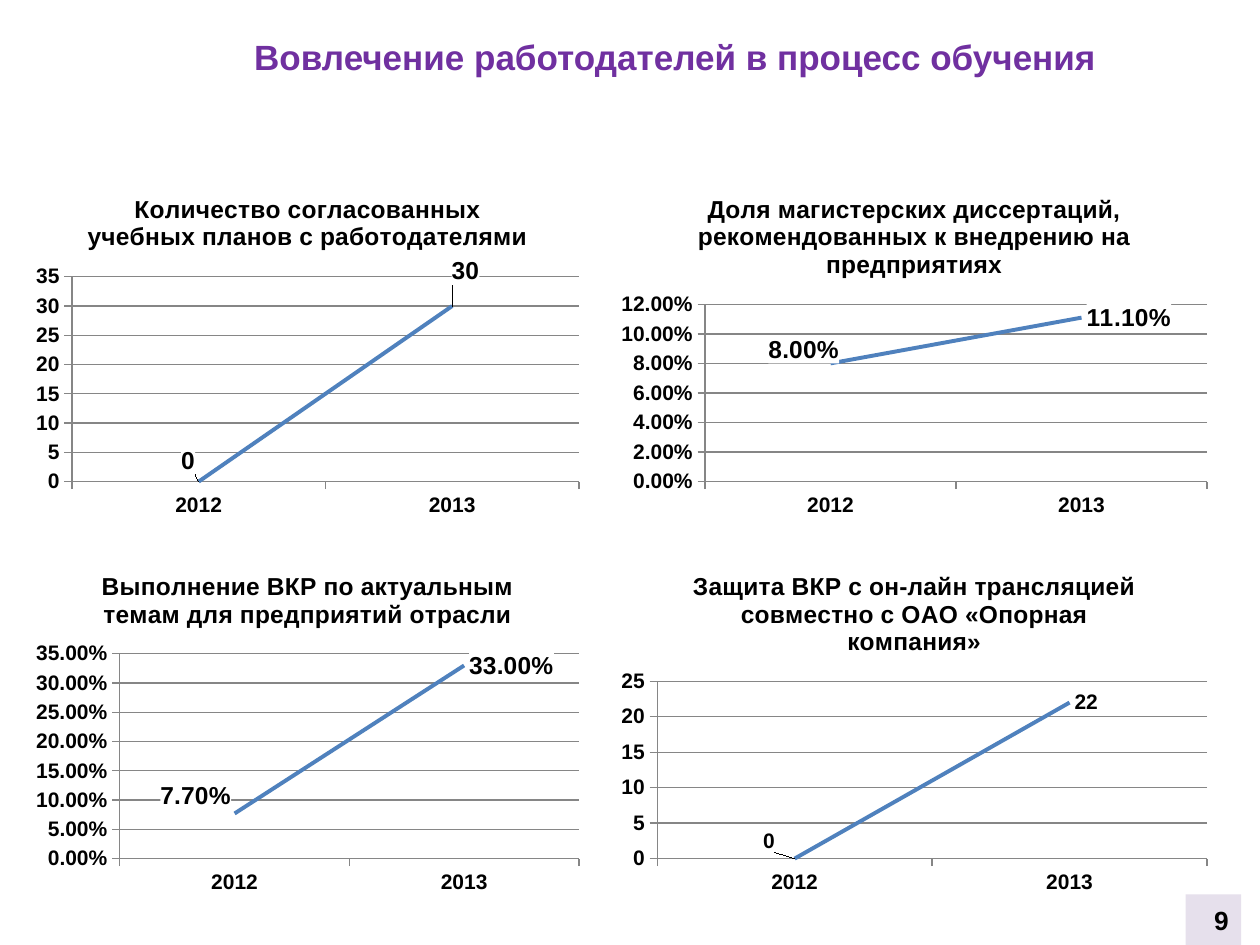
import lxml.etree
import pptx
import pptx.chart.data
import pptx.dml.color
import pptx.enum.chart
import pptx.enum.shapes
import pptx.enum.text
import pptx.oxml
import pptx.oxml.ns
import pptx.util
from pptx.util import Cm, Pt

FONT = "Arial"
BLACK, WHITE, PURPLE, LILAC = "000000", "FFFFFF", "7030A0", "E6E0EC"
SERIES_BLUE, GRID_GREY = "4F81BD", "868686"
YEARS = ["2012", "2013"]
COUNT, PERCENT = "General", "0.00%"

# title, values, number format, axis maximum, axis step, label size, label shifts
# A shift is a fraction of the chart's width and height from the place right of the point.
INDICATORS = [
    ("Количество согласованных учебных планов с работодателями",
     (0, 30), COUNT, 35, 5, 14, [(-0.04, -0.06), (-0.01, -0.1)]),
    ("Доля магистерских диссертаций, рекомендованных к внедрению на предприятиях",
     (0.08, 0.111), PERCENT, 0.12, 0.02, 14, [(-0.11, -0.04), None]),
    ("Выполнение ВКР по актуальным темам для предприятий отрасли",
     (0.077, 0.33), PERCENT, 0.35, 0.05, 14, [(-0.14, -0.05), None]),
    ("Защита ВКР с он-лайн трансляцией совместно с ОАО «Опорная компания»",
     (0, 22), COUNT, 25, 5, 12, [(-0.06, -0.05), None]),
]


def rgb(hex_colour):
    return pptx.dml.color.RGBColor.from_string(hex_colour)


def style_font(font, size, colour=BLACK):
    font.name = FONT
    font.size = Pt(size)
    font.bold = True
    font.color.rgb = rgb(colour)


def chart_xml(body):
    namespaces = pptx.oxml.ns.nsdecls("c", "a")
    tag, rest = body.split(">", 1)
    return pptx.oxml.parse_xml(f"{tag} {namespaces}>{rest}")


def white_fill():
    return chart_xml(f'<c:spPr><a:solidFill><a:srgbClr val="{WHITE}"/></a:solidFill>'
                     "<a:ln><a:noFill/></a:ln></c:spPr>")


def add_filled_box(slide, box, text, fill, size, colour, align):
    panel = slide.shapes.add_shape(pptx.enum.shapes.MSO_SHAPE.RECTANGLE, *box)
    panel.shadow.inherit = False
    panel.fill.solid()
    panel.fill.fore_color.rgb = rgb(fill)
    panel.line.fill.background()
    frame = panel.text_frame
    frame.word_wrap = True
    frame.vertical_anchor = pptx.enum.text.MSO_ANCHOR.MIDDLE
    paragraph = frame.paragraphs[0]
    paragraph.text = text
    paragraph.alignment = align
    style_font(paragraph.font, size, colour)


def style_axes(chart, number_format, maximum, step):
    values = chart.value_axis
    values.minimum_scale, values.maximum_scale = 0, maximum
    values.major_unit = step
    values.tick_labels.number_format = number_format
    values.tick_labels.number_format_is_linked = False
    values.has_major_gridlines = True
    values.major_gridlines.format.line.color.rgb = rgb(GRID_GREY)
    for axis in (values, chart.category_axis):
        axis.major_tick_mark = pptx.enum.chart.XL_TICK_MARK.OUTSIDE
        axis.format.line.color.rgb = rgb(GRID_GREY)
        style_font(axis.tick_labels.font, 12)


def label_points(chart, series, size, shifts):
    """Put a white-backed value label at each point, moved by its shift."""
    for index in range(len(shifts)):
        label = series.points[index].data_label
        style_font(label.font, size)
        label.position = pptx.enum.chart.XL_LABEL_POSITION.RIGHT
    for label, shift in zip(chart.element.xpath(".//c:dLbl"), shifts):
        label.xpath("c:txPr")[0].addprevious(white_fill())
        if shift:
            x, y = shift
            label.xpath("c:idx")[0].addnext(chart_xml(
                f'<c:layout><c:manualLayout><c:x val="{x}"/><c:y val="{y}"/>'
                "</c:manualLayout></c:layout>"))


def add_indicator_chart(slide, box, title, values, number_format, maximum, step,
                        label_size, shifts):
    data = pptx.chart.data.CategoryChartData(number_format=number_format)
    data.categories = YEARS
    data.add_series(title, values)
    chart = slide.shapes.add_chart(pptx.enum.chart.XL_CHART_TYPE.LINE, *box, data).chart
    style_font(chart.font, 12)
    chart.element.xpath("c:txPr")[0].addprevious(white_fill())
    chart.has_legend = False
    chart.has_title = True
    heading = chart.chart_title.text_frame.paragraphs[0]
    heading.text = title
    style_font(heading.font, 14)
    style_axes(chart, number_format, maximum, step)

    plot = chart.plots[0]
    plot.vary_by_categories = False
    series = plot.series[0]
    series.smooth = False
    series.marker.style = pptx.enum.chart.XL_MARKER_STYLE.NONE
    series.format.line.color.rgb = rgb(SERIES_BLUE)
    series.format.line.width = Pt(2.25)
    label_points(chart, series, label_size, shifts)


def add_chart_grid(slide, left, top):
    widths = (Cm(11.4), Cm(12.3))
    height, column_gap, row_gap = Cm(7.02), Cm(0.38), Cm(0.58)
    for index, indicator in enumerate(INDICATORS):
        row, column = divmod(index, 2)
        box = (left + column * (widths[0] + column_gap),
               top + row * (height + row_gap), widths[column], height)
        add_indicator_chart(slide, box, *indicator)


def main():
    presentation = pptx.Presentation()
    presentation.slide_width, presentation.slide_height = Cm(25.4), Cm(19.05)
    slide = presentation.slides.add_slide(presentation.slide_layouts[6])
    align = pptx.enum.text.PP_ALIGN
    add_filled_box(slide, (Cm(2.6), Cm(0.58), Cm(22.02), Cm(1.12)),
                   "Вовлечение работодателей в процесс обучения",
                   WHITE, 20, PURPLE, align.CENTER)
    add_chart_grid(slide, Cm(0.5), Cm(3.53))
    add_filled_box(slide, (Cm(23.9), Cm(18.03), Cm(1.12), Cm(1.02)),
                   "9", LILAC, 15, BLACK, align.RIGHT)
    presentation.save("out.pptx")


if __name__ == "__main__":
    main()
